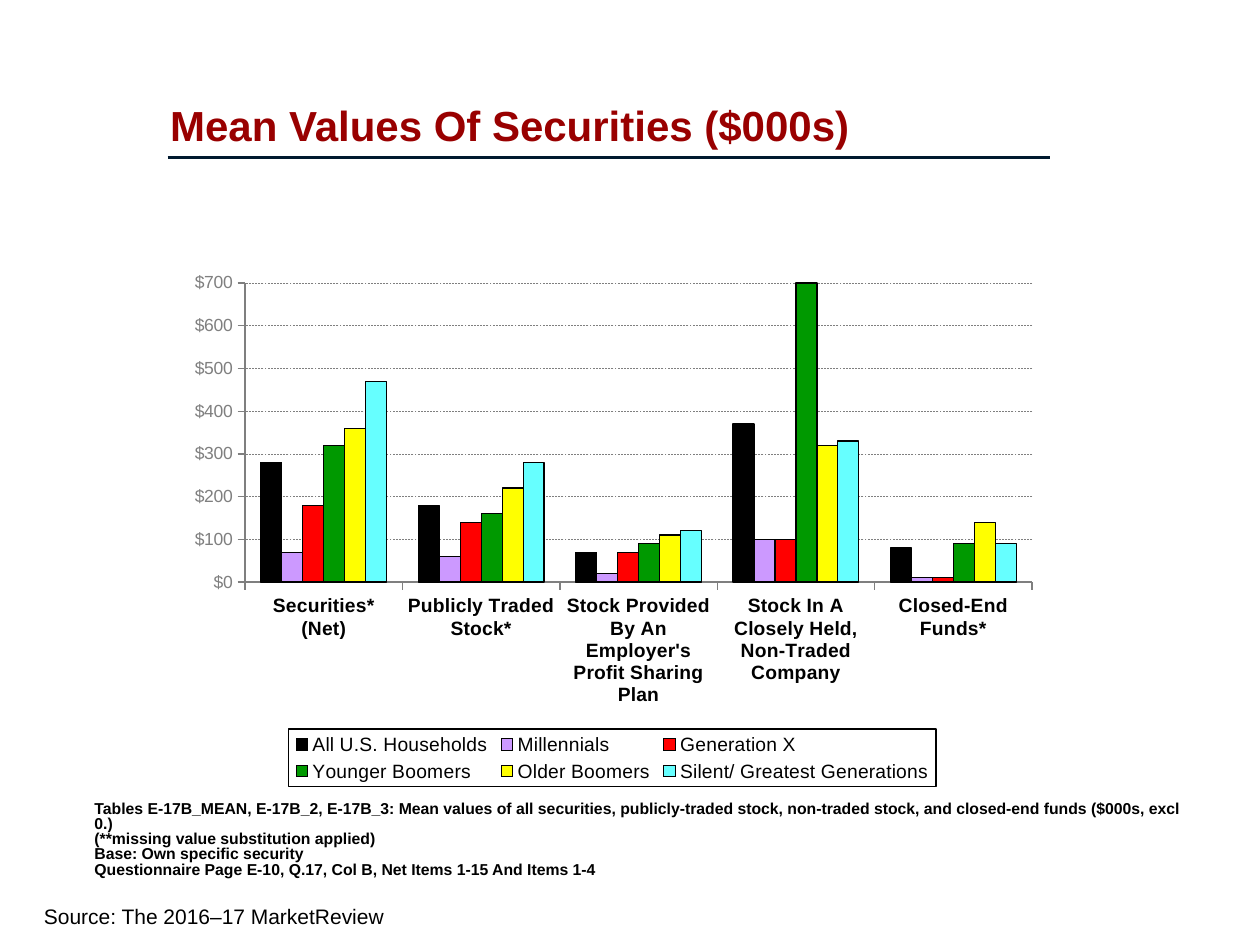
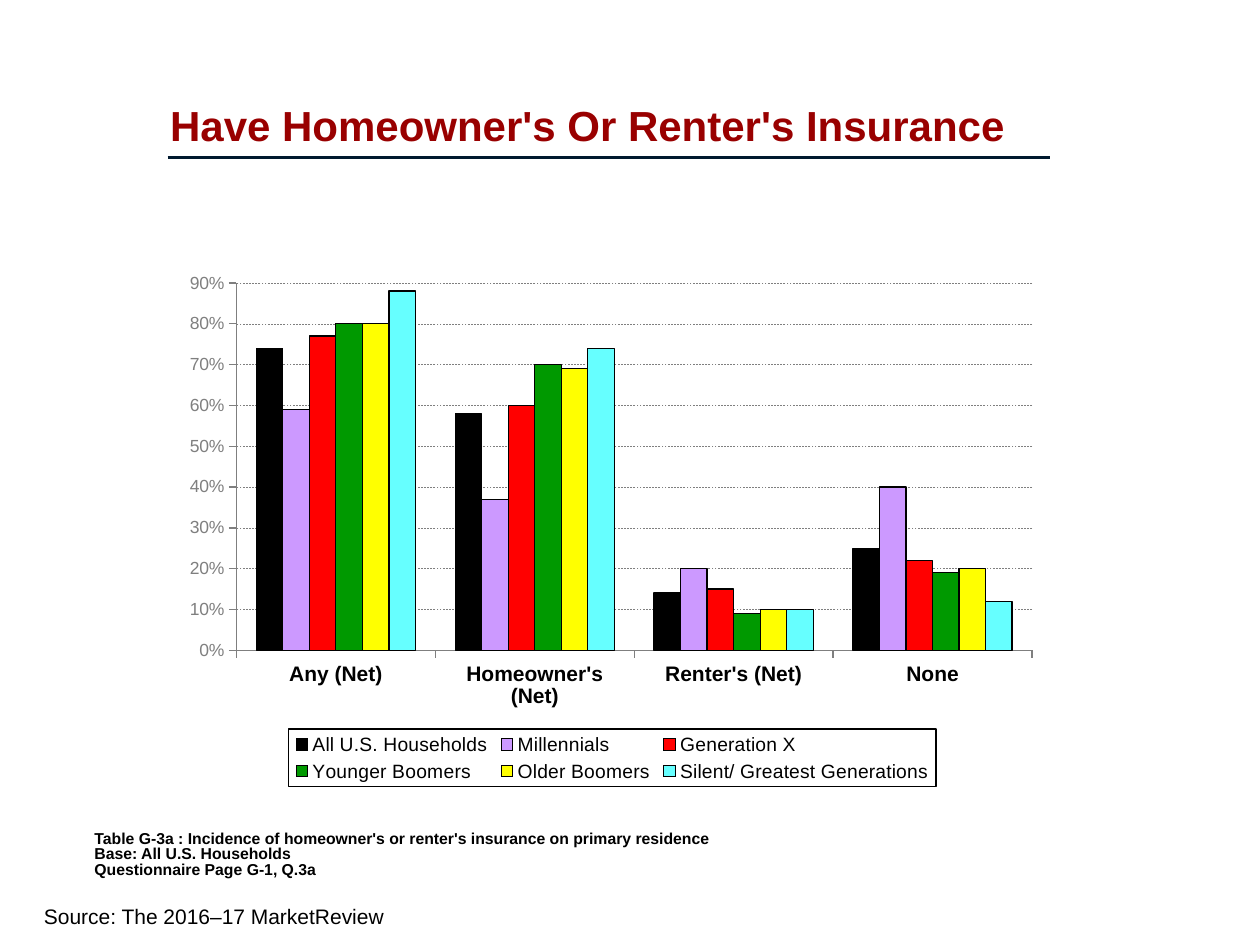
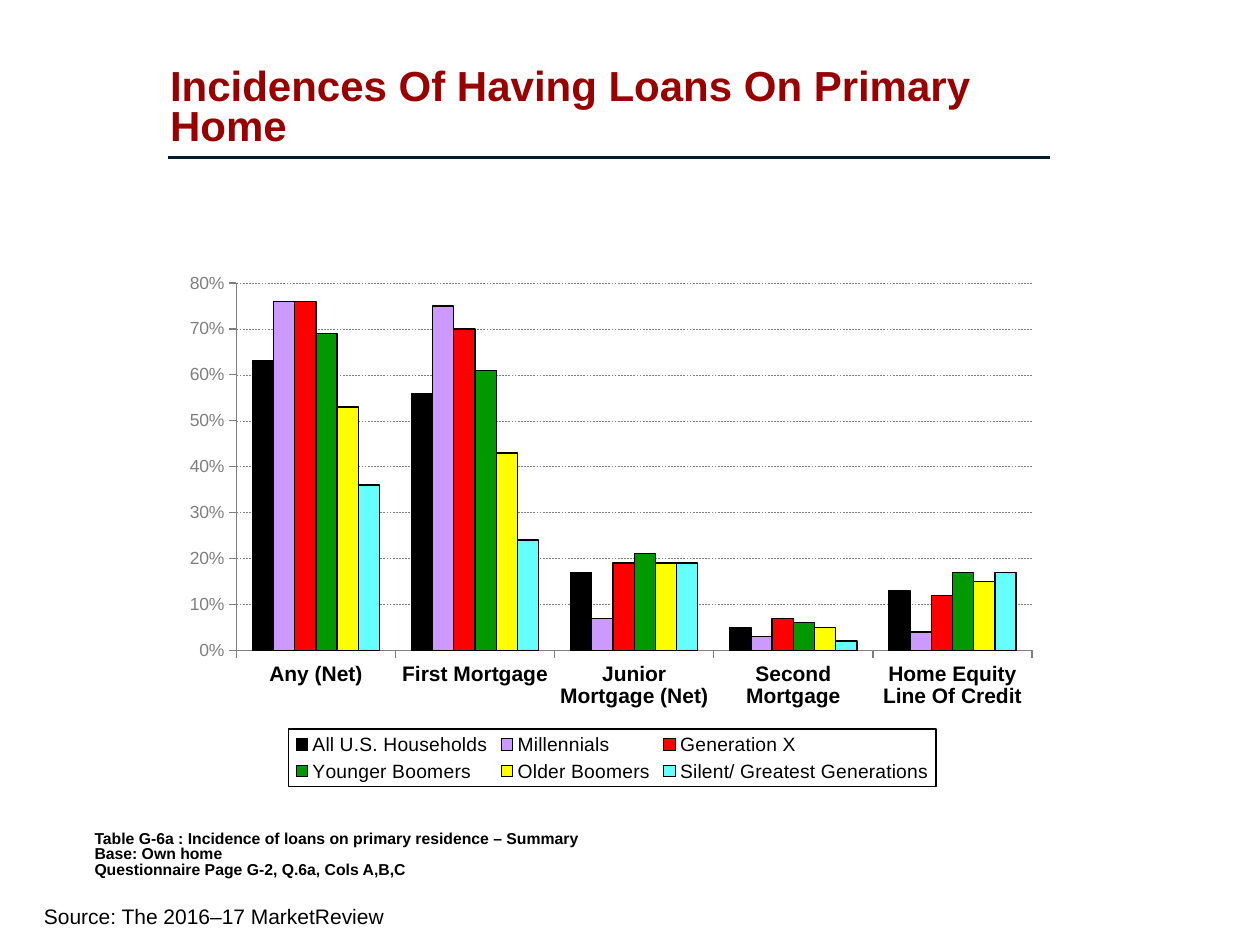
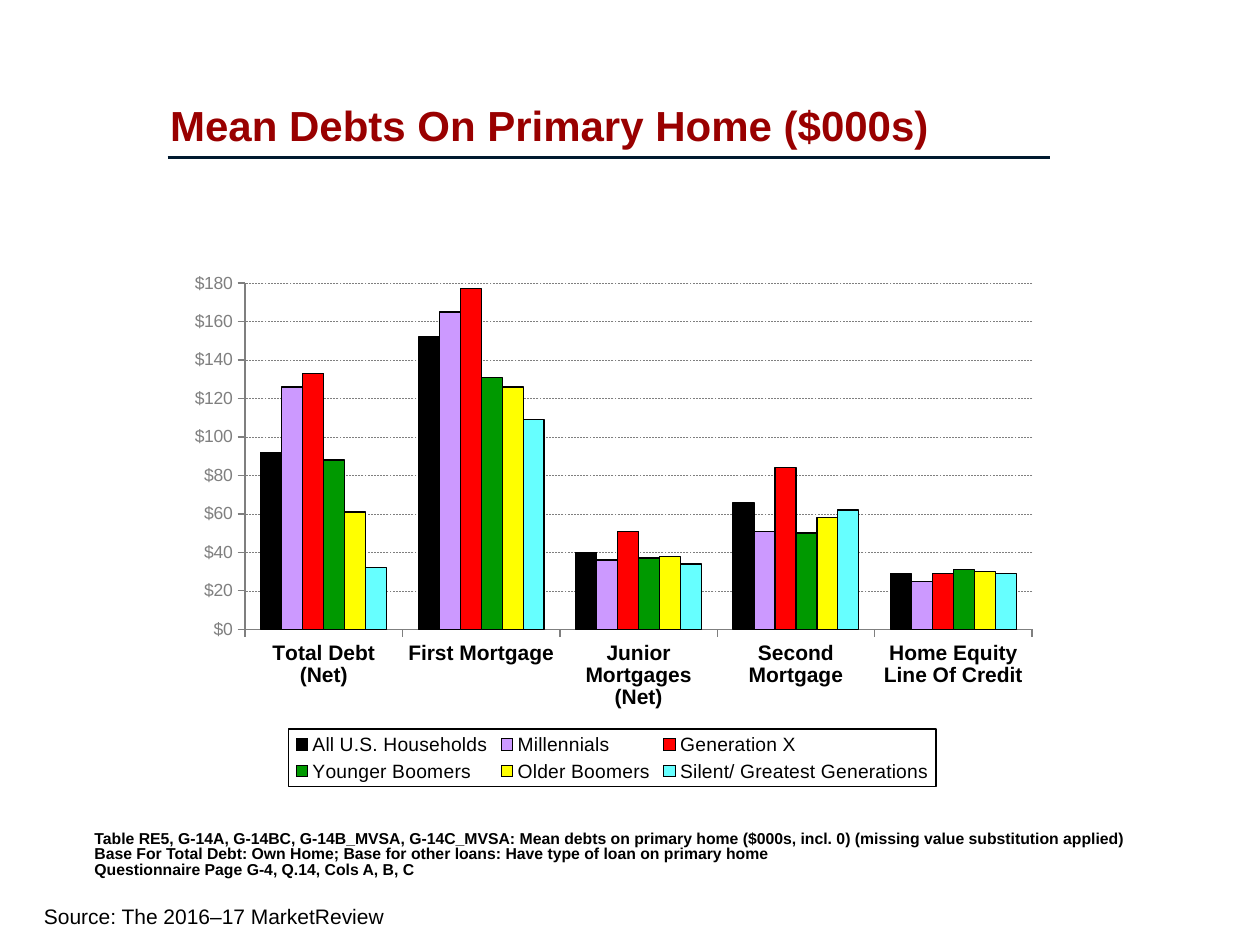
import dataclasses

import lxml.etree
import pptx
import pptx.chart.data
import pptx.dml.color
import pptx.enum.chart
import pptx.enum.dml
import pptx.enum.shapes
import pptx.enum.text
import pptx.oxml.ns
import pptx.util

Inches = pptx.util.Inches
Pt = pptx.util.Pt
qn = pptx.oxml.ns.qn


@dataclasses.dataclass(frozen=True)
class Theme:
    font: str = "Arial"
    title: str = "990000"
    rule: str = "00192F"
    text: str = "000000"
    axis: str = "7F7F7F"
    title_size: float = 24
    source_size: float = 12
    note_size: float = 9
    axis_size: float = 10
    legend_size: float = 11


GENERATIONS = [
    ("All U.S. Households", "000000"),
    ("Millennials", "CC99FF"),
    ("Generation X", "FF0000"),
    ("Younger Boomers", "009900"),
    ("Older Boomers", "FFFF00"),
    ("Silent/ Greatest Generations", "66FFFF"),
]
SOURCE = "Source: The 2016–17 MarketReview"
DOLLARS, PERCENT = '"$"#,##0', "0%"


def rgb(value):
    return pptx.dml.color.RGBColor.from_string(value)


def set_format(obj, **values):
    for name, value in values.items():
        setattr(obj, name, value)


def set_layout(parent, index, x, y, w, h, inner=False):
    """Place a chart part by fractions of the chart's size."""
    for old in parent.findall(qn("c:layout")):
        parent.remove(old)
    layout = lxml.etree.Element(qn("c:layout"))
    parent.insert(index, layout)
    manual = lxml.etree.SubElement(layout, qn("c:manualLayout"))
    values = {"layoutTarget": "inner"} if inner else {}
    values.update(xMode="edge", yMode="edge", x=x, y=y, w=w, h=h)
    for name, value in values.items():
        lxml.etree.SubElement(manual, qn("c:" + name), val=str(value))


class Deck:
    def __init__(self, theme):
        self.theme = theme
        self.prs = pptx.Presentation()
        set_format(self.prs, slide_width=Inches(10), slide_height=Inches(7.5))
        self.slide = None

    def font(self, font, size, color, bold=False):
        set_format(font, name=self.theme.font, size=Pt(size), bold=bold)
        font.color.rgb = rgb(color)

    def line(self, line, color, width):
        line.color.rgb = rgb(color)
        line.width = Pt(width)

    def text(self, sp, box, text, size, color, bold=False, insets=None, spacing=None):
        left, top, width, height = map(Inches, box)
        set_format(sp, left=left, top=top, width=width, height=height)
        tf = sp.text_frame
        set_format(tf, word_wrap=True, auto_size=pptx.enum.text.MSO_AUTO_SIZE.NONE)
        if insets:
            sides = ("margin_left", "margin_top", "margin_right", "margin_bottom")
            set_format(tf, vertical_anchor=pptx.enum.text.MSO_ANCHOR.BOTTOM,
                       **dict(zip(sides, map(Inches, insets))))
        p = tf.paragraphs[0]
        p.text = text
        set_format(p, alignment=pptx.enum.text.PP_ALIGN.LEFT, line_spacing=spacing)
        self.font(p.font, size, color, bold)
        for r in p.runs:
            self.font(r.font, size, color, bold)

    def text_box(self):
        return self.slide.shapes.add_textbox(0, 0, 0, 0)

    # Slide with its shared source line, rule and title
    def new_slide(self, title):
        t = self.theme
        self.slide = self.prs.slides.add_slide(self.prs.slide_layouts[5])
        self.text(self.text_box(), (0.25, 7.12, 8.92, 0.3), SOURCE, t.source_size, t.text)
        rule = self.slide.shapes.add_connector(
            pptx.enum.shapes.MSO_CONNECTOR.STRAIGHT,
            Inches(1.33), Inches(1.25), Inches(8.33), Inches(1.25))
        self.line(rule.line, t.rule, 2)
        lxml.etree.SubElement(rule.element.spPr, qn("a:effectLst"))
        self.text(self.slide.shapes.title, (1.35, 0.53, 7.01, 0.71), title,
                  t.title_size, t.title, True, (0, 0, 0, 0.05), 0.8)

    # Notes stand on a common bottom edge
    def note(self, lines, width, top=6.35):
        t = self.theme
        self.text(self.text_box(), (0.35, top, width, 7.1 - top), "\n".join(lines),
                  t.note_size, t.text, True, (0.4, 0.13, 0, 0.13), 0.8)

    def chart(self, cats, rows, fmt, top_value, plot_height, cat_size=12):
        t = self.theme
        data = pptx.chart.data.CategoryChartData(number_format=fmt)
        data.categories = cats
        for (name, _), vals in zip(GENERATIONS, rows):
            data.add_series(name, vals)
        chart = self.slide.shapes.add_chart(
            pptx.enum.chart.XL_CHART_TYPE.COLUMN_CLUSTERED,
            Inches(1.39), Inches(2.08), Inches(6.94), Inches(4.17), data).chart
        set_format(chart, has_title=False, has_legend=True)
        self.font(chart.font, t.axis_size, t.text)

        # Columns
        plot = chart.plots[0]
        set_format(plot, gap_width=150, overlap=0, vary_by_categories=False)
        for s, (_, color) in zip(plot.series, GENERATIONS):
            s.invert_if_negative = False
            s.format.fill.solid()
            s.format.fill.fore_color.rgb = rgb(color)
            self.line(s.format.line, t.text, 0.75)

        # Axes
        for axis in (chart.category_axis, chart.value_axis):
            set_format(axis, major_tick_mark=pptx.enum.chart.XL_TICK_MARK.OUTSIDE,
                       minor_tick_mark=pptx.enum.chart.XL_TICK_MARK.NONE)
            self.line(axis.format.line, t.axis, 0.75)
        self.font(chart.category_axis.tick_labels.font, cat_size, t.text, True)
        values = chart.value_axis
        set_format(values, maximum_scale=top_value, has_major_gridlines=True)
        set_format(values.tick_labels, number_format=fmt, number_format_is_linked=False)
        self.font(values.tick_labels.font, t.axis_size, t.axis)
        grid = values.major_gridlines.format.line
        self.line(grid, t.axis, 0.25)
        grid.dash_style = pptx.enum.dml.MSO_LINE.DASH

        # Framed legend
        set_format(chart.legend, position=pptx.enum.chart.XL_LEGEND_POSITION.BOTTOM,
                   include_in_layout=False)
        self.font(chart.legend.font, t.legend_size, t.text)
        legend = chart.element.find(".//" + qn("c:legend"))
        frame = lxml.etree.Element(qn("c:spPr"))
        ln = lxml.etree.SubElement(frame, qn("a:ln"), w=str(Pt(0.75)))
        fill = lxml.etree.SubElement(ln, qn("a:solidFill"))
        lxml.etree.SubElement(fill, qn("a:srgbClr"), val=t.text)
        legend.find(qn("c:txPr")).addprevious(frame)

        # Plot and legend places
        set_layout(legend, 1, 0.13, 0.89, 0.74, 0.11)
        plot_left = 0.08 if fmt == DOLLARS else 0.07
        set_layout(chart.element.find(".//" + qn("c:plotArea")), 0,
                   plot_left, 0.04, round(0.98 - plot_left, 2), plot_height, inner=True)


def main():
    deck = Deck(Theme())

    # Securities
    deck.new_slide("Mean Values Of Securities ($000s)")
    deck.chart(
        ["Securities* (Net)", "Publicly Traded Stock*",
         "Stock Provided By An Employer's Profit Sharing Plan",
         "Stock In A Closely Held, Non-Traded Company", "Closed-End Funds*"],
        [(280, 180, 70, 370, 80), (70, 60, 20, 100, 10), (180, 140, 70, 100, 10),
         (320, 160, 90, 700, 90), (360, 220, 110, 320, 140), (470, 280, 120, 330, 90)],
        DOLLARS, 700, 0.57, cat_size=11)
    deck.note(
        ["Tables E-17B_MEAN, E-17B_2, E-17B_3: Mean values of all securities, "
         "publicly-traded stock, non-traded stock, and closed-end funds ($000s, excl 0.)",
         "(**missing value substitution applied)", "Base: Own specific security",
         "Questionnaire Page E-10, Q.17, Col B, Net Items 1-15 And Items 1-4"],
        9.06, top=6.25)

    # Insurance
    deck.new_slide("Have Homeowner's Or Renter's Insurance")
    deck.chart(
        ["Any (Net)", "Homeowner's (Net)", "Renter's (Net)", "None"],
        [(0.74, 0.58, 0.14, 0.25), (0.59, 0.37, 0.2, 0.4), (0.77, 0.6, 0.15, 0.22),
         (0.8, 0.7, 0.09, 0.19), (0.8, 0.69, 0.1, 0.2), (0.88, 0.74, 0.1, 0.12)],
        PERCENT, 0.9, 0.7)
    deck.note(
        ["Table G-3a : Incidence of homeowner's or renter's insurance on primary residence",
         "Base: All U.S. Households", "Questionnaire Page G-1, Q.3a"], 9.06)

    # Loans
    deck.new_slide("Incidences Of Having Loans On Primary Home")
    deck.chart(
        ["Any (Net)", "First Mortgage", "Junior Mortgage (Net)", "Second Mortgage",
         "Home Equity Line Of Credit"],
        [(0.63, 0.56, 0.17, 0.05, 0.13), (0.76, 0.75, 0.07, 0.03, 0.04),
         (0.76, 0.7, 0.19, 0.07, 0.12), (0.69, 0.61, 0.21, 0.06, 0.17),
         (0.53, 0.43, 0.19, 0.05, 0.15), (0.36, 0.24, 0.19, 0.02, 0.17)],
        PERCENT, None, 0.7)
    deck.note(
        ["Table G-6a : Incidence of loans on primary residence – Summary",
         "Base: Own home", "Questionnaire Page G-2, Q.6a, Cols A,B,C"], 8.35)

    # Debts
    deck.new_slide("Mean Debts On Primary Home ($000s)")
    deck.chart(
        ["Total Debt (Net)", "First Mortgage", "Junior Mortgages (Net)",
         "Second Mortgage", "Home Equity Line Of Credit"],
        [(92, 152, 40, 66, 29), (126, 165, 36, 51, 25), (133, 177, 51, 84, 29),
         (88, 131, 37, 50, 31), (61, 126, 38, 58, 30), (32, 109, 34, 62, 29)],
        DOLLARS, 180, 0.66)
    deck.note(
        ["Table RE5, G-14A, G-14BC, G-14B_MVSA, G-14C_MVSA: Mean debts on primary home "
         "($000s, incl. 0) (missing value substitution applied)",
         "Base For Total Debt: Own Home; Base for other loans: Have type of loan on primary home",
         "Questionnaire Page G-4, Q.14, Cols A, B, C"], 8.66)

    deck.prs.save("out.pptx")


if __name__ == "__main__":
    main()
